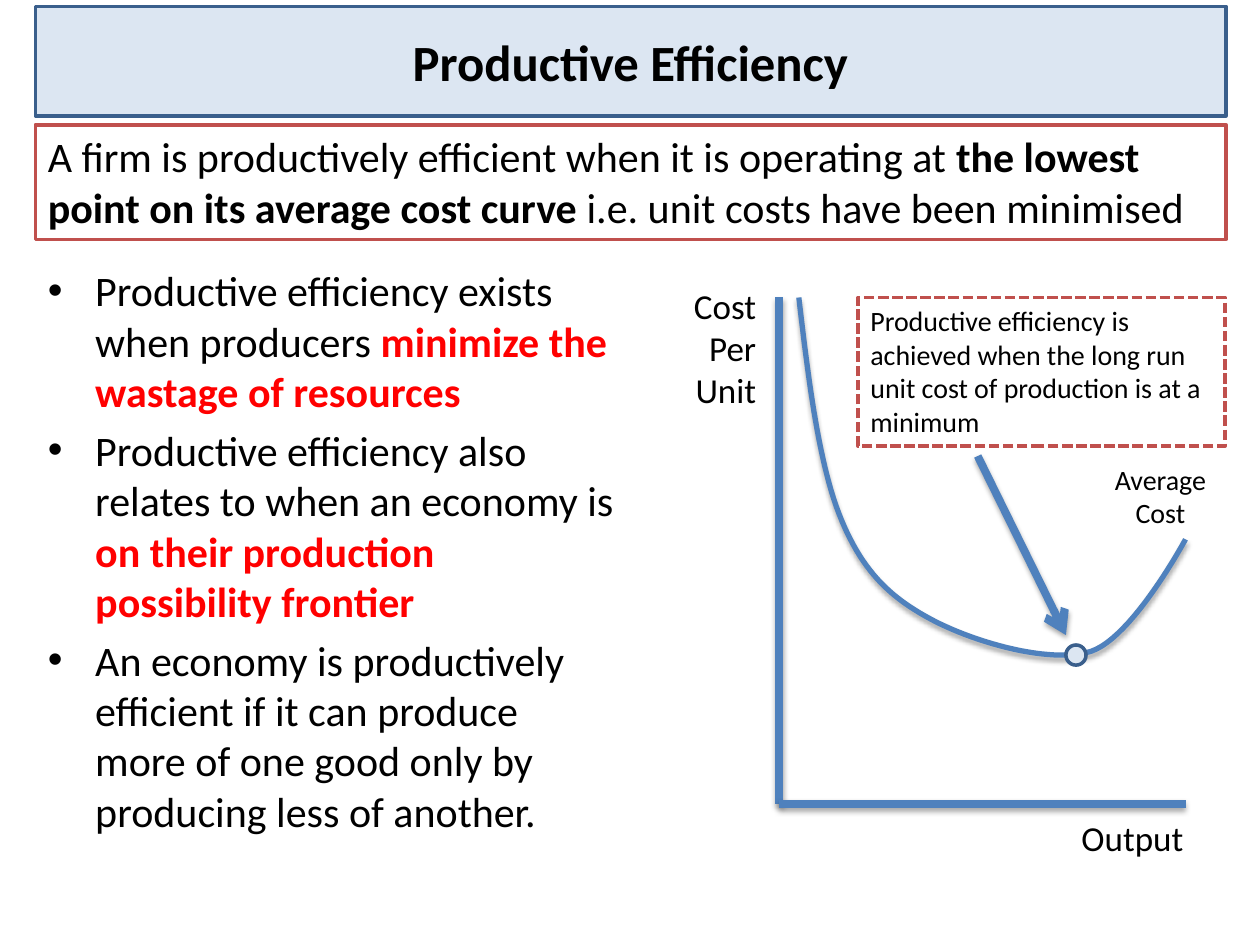
"""Build the productive efficiency slide with its average cost diagram."""
from dataclasses import dataclass

from lxml.etree import SubElement
from pptx import Presentation
from pptx.dml.color import RGBColor
from pptx.enum.dml import MSO_LINE
from pptx.enum.shapes import MSO_CONNECTOR, MSO_SHAPE
from pptx.enum.text import MSO_ANCHOR, MSO_AUTO_SIZE, PP_ALIGN
from pptx.oxml.ns import qn
from pptx.util import Pt

BLACK = RGBColor(0x00, 0x00, 0x00)
WHITE = RGBColor(0xFF, 0xFF, 0xFF)
RED = RGBColor(0xFF, 0x00, 0x00)
BRICK = RGBColor(0xC0, 0x50, 0x4D)
BLUE = RGBColor(0x4F, 0x81, 0xBD)
NAVY = RGBColor(0x3A, 0x5F, 0x8C)
PALE_BLUE = RGBColor(0xDC, 0xE6, 0xF2)

FONT = "Calibri"
MARGIN = 20.2
FULL_WIDTH = 680.4
AXIS_LEFT, AXIS_TOP = 445, 170
AXIS_RIGHT, AXIS_BOTTOM = 677.5, 459.4
CURVE_STEPS = 24

Point = tuple[float, float]


@dataclass(frozen=True)
class Area:
    left: float
    top: float
    width: float
    height: float

    def lengths(self) -> tuple[Pt, Pt, Pt, Pt]:
        return Pt(self.left), Pt(self.top), Pt(self.width), Pt(self.height)


@dataclass(frozen=True)
class Phrase:
    text: str
    bold: bool = False
    color: RGBColor = BLACK


@dataclass(frozen=True)
class Label:
    area: Area
    text: str
    size: float
    align: PP_ALIGN


@dataclass(frozen=True)
class Line:
    start: Point
    end: Point
    arrow: bool = False


TITLE_AREA = Area(MARGIN, 3.6, FULL_WIDTH, 62.6)
BODY_AREA = Area(MARGIN, 147.6, 339.8, 368.6)
DEFINITION_AREA = Area(MARGIN, 71.3, FULL_WIDTH, 65.5)
CALLOUT_AREA = Area(490.3, AXIS_TOP, 209.7, 85)
MINIMUM_AREA = Area(609.1, 368.6, 11.5, 11.5)

BULLETS = [
    [
        Phrase("Productive efficiency exists when producers "),
        Phrase("minimize the wastage of resources", True, RED),
    ],
    [
        Phrase("Productive efficiency also relates to when an economy is "),
        Phrase("on their production possibility frontier", True, RED),
    ],
    [
        Phrase(
            "An economy is productively efficient if it can produce "
            "more of one good only by producing less of another."
        )
    ],
]
DEFINITION = [
    Phrase("A firm is productively efficient when it is operating at "),
    Phrase("the lowest point on its average cost curve", True),
    Phrase(" i.e. unit costs have been minimised"),
]
CALLOUT = [
    Phrase(
        "Productive efficiency is achieved when the long run "
        "unit cost of production is at a minimum"
    )
]
LABELS = [
    Label(Area(365.8, 159.1, 73.4, 79.9), "Cost Per Unit", 20, PP_ALIGN.RIGHT),
    Label(Area(490.3, 463, 193, 31.7), "Output", 20, PP_ALIGN.RIGHT),
    Label(Area(626.4, 260.6, 73.4, 46.1), "Average Cost", 16, PP_ALIGN.CENTER),
]
LINES = [
    Line((AXIS_LEFT, AXIS_TOP), (AXIS_LEFT, AXIS_BOTTOM)),
    Line((AXIS_LEFT, AXIS_BOTTOM), (AXIS_RIGHT, AXIS_BOTTOM)),
    Line((558.7, 260.6), (609.1, 362.9), arrow=True),
]
CURVE_START = (456.5, AXIS_TOP)
CURVE_SEGMENTS = [
    ((462.2, 218.2), (468, 266.4), (481, 297.4)),
    ((493.9, 328.3), (510.5, 342.7), (534.2, 355)),
    ((558, 367.2), (599.8, 379.4), (623.5, 372.2)),
    ((647.3, 364.3), (AXIS_RIGHT, 308.2), (AXIS_RIGHT, 308.2)),
]


def write(para, phrases: list[Phrase], size: float, align=PP_ALIGN.LEFT) -> None:
    para.alignment = align
    para.font.name = FONT
    para.font.size = Pt(size)
    for phrase in phrases:
        span = para.add_run()
        span.text = phrase.text
        span.font.bold = phrase.bold
        span.font.color.rgb = phrase.color


def place(shape, area: Area) -> None:
    shape.left, shape.top, shape.width, shape.height = area.lengths()


def paint(shape, fill: RGBColor, line: RGBColor) -> None:
    shape.fill.solid()
    shape.fill.fore_color.rgb = fill
    shape.line.color.rgb = line
    shape.line.width = Pt(2)


def stroke(shape, width: float) -> None:
    shape.line.color.rgb = BLUE
    shape.line.width = Pt(width)
    effects = SubElement(shape._element.spPr, qn("a:effectLst"))
    shadow = SubElement(effects, qn("a:outerShdw"), blurRad=str(Pt(3.1)),
                        dist=str(Pt(1.8)), dir="5400000", rotWithShape="0")
    color = SubElement(shadow, qn("a:srgbClr"), val=str(BLACK))
    SubElement(color, qn("a:alpha"), val="35000")


def add_title(slide) -> None:
    title = slide.shapes.title
    place(title, TITLE_AREA)
    geometry = SubElement(title._element.spPr, qn("a:prstGeom"), prst="roundRect")
    SubElement(geometry, qn("a:avLst"))
    paint(title, PALE_BLUE, NAVY)
    title.text_frame.vertical_anchor = MSO_ANCHOR.MIDDLE
    write(title.text_frame.paragraphs[0], [Phrase("Productive Efficiency", True)],
          29, PP_ALIGN.CENTER)


def add_bullets(slide) -> None:
    body = slide.placeholders[1]
    place(body, BODY_AREA)
    frame = body.text_frame
    frame.auto_size = MSO_AUTO_SIZE.NONE
    for index, phrases in enumerate(BULLETS):
        para = frame.add_paragraph() if index else frame.paragraphs[0]
        para.space_before = Pt(4.8 if index else 0)
        write(para, phrases, 24)


def add_shape(slide, kind: MSO_SHAPE, area: Area, fill: RGBColor, line: RGBColor):
    shape = slide.shapes.add_shape(kind, *area.lengths())
    shape.shadow.inherit = False
    paint(shape, fill, line)
    return shape


def add_text_panel(slide, area: Area, phrases: list[Phrase], size: float):
    panel = add_shape(slide, MSO_SHAPE.RECTANGLE, area, WHITE, BRICK)
    panel.text_frame.word_wrap = True
    panel.text_frame.vertical_anchor = MSO_ANCHOR.TOP
    write(panel.text_frame.paragraphs[0], phrases, size)
    return panel


def add_label(slide, label: Label) -> None:
    box = slide.shapes.add_textbox(*label.area.lengths())
    box.text_frame.word_wrap = True
    write(box.text_frame.paragraphs[0], [Phrase(label.text)], label.size, label.align)


def add_line(slide, line: Line) -> None:
    ends = [Pt(value) for value in (*line.start, *line.end)]
    connector = slide.shapes.add_connector(MSO_CONNECTOR.STRAIGHT, *ends)
    stroke(connector, 4.5)
    if line.arrow:
        SubElement(connector.line._get_or_add_ln(), qn("a:tailEnd"), type="arrow")


def bezier(points: tuple[Point, ...], t: float) -> Point:
    u = 1 - t
    weights = (u**3, 3 * u * u * t, 3 * u * t * t, t**3)
    x, y = (sum(w * v for w, v in zip(weights, axis)) for axis in zip(*points))
    return Pt(x), Pt(y)


def add_cost_curve(slide) -> None:
    builder = slide.shapes.build_freeform(*map(Pt, CURVE_START))
    start = CURVE_START
    for segment in CURVE_SEGMENTS:
        steps = range(1, CURVE_STEPS + 1)
        builder.add_line_segments(
            [bezier((start, *segment), step / CURVE_STEPS) for step in steps], close=False)
        start = segment[-1]
    curve = builder.convert_to_shape()
    curve.fill.background()
    stroke(curve, 3)


def main() -> None:
    deck = Presentation()
    deck.slide_width, deck.slide_height = Pt(720), Pt(540)
    slide = deck.slides.add_slide(deck.slide_layouts[1])
    add_title(slide)
    add_bullets(slide)
    add_text_panel(slide, DEFINITION_AREA, DEFINITION, 24)
    add_cost_curve(slide)
    add_shape(slide, MSO_SHAPE.OVAL, MINIMUM_AREA, PALE_BLUE, NAVY)
    callout = add_text_panel(slide, CALLOUT_AREA, CALLOUT, 16)
    callout.line.dash_style = MSO_LINE.SQUARE_DOT
    for label in LABELS:
        add_label(slide, label)
    for line in LINES:
        add_line(slide, line)
    deck.save("out.pptx")


if __name__ == "__main__":
    main()
